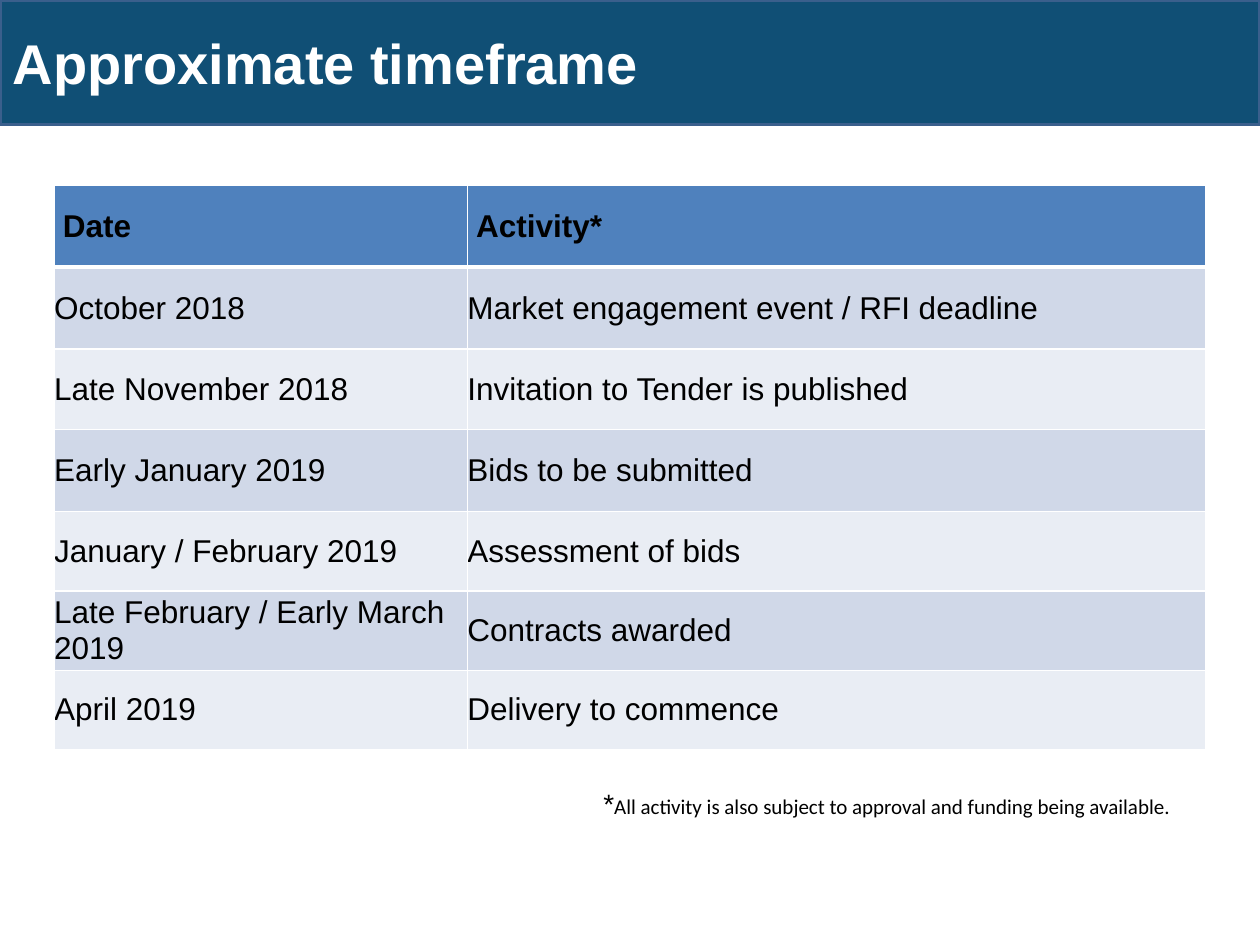
from lxml import etree
from pptx import Presentation
from pptx.dml.color import RGBColor
from pptx.enum.text import MSO_ANCHOR, MSO_AUTO_SIZE, PP_ALIGN
from pptx.oxml.ns import qn
from pptx.util import Inches, Pt

MIDDLE = MSO_ANCHOR.MIDDLE
LEFT = PP_ALIGN.LEFT
GROW = MSO_AUTO_SIZE.SHAPE_TO_FIT_TEXT
TITLE_ONLY = 5

COLORS = {
    "banner": "104F75",
    "banner_line": "3A5F8C",
    "header": "4F81BD",
    "odd_row": "D0D8E8",
    "even_row": "E9EDF4",
    "white": "FFFFFF",
    "black": "000000",
}
ROWS = [
    ("Date", "Activity*"),
    ("October 2018", "Market engagement event / RFI deadline"),
    ("Late November 2018", "Invitation to Tender is published"),
    ("Early January 2019", "Bids to be submitted"),
    ("January / February 2019", "Assessment of bids"),
    ("Late February / Early March 2019", "Contracts awarded"),
    ("April 2019", "Delivery to commence"),
]
COLUMN_WIDTHS = [3.28, 5.86]
ROW_HEIGHTS = [0.65, 0.65, 0.64, 0.65, 0.63, 0.63, 0.63]


def add_text(para, text, size=18, font="Arial", color="black", bold=False):
    para.alignment = LEFT
    span = para.add_run()
    span.text = text
    span.font.size = Pt(size)
    span.font.name = font
    span.font.bold = bold
    span.font.color.rgb = RGBColor.from_string(COLORS[color])


def add_border(cell, side, width):
    line = etree.SubElement(cell._tc.get_or_add_tcPr(), qn(f"a:ln{side}"), w=str(Pt(width)))
    fill = etree.SubElement(line, qn("a:solidFill"))
    etree.SubElement(fill, qn("a:srgbClr"), val=COLORS["white"])


deck = Presentation()
deck.slide_width = Inches(10)
deck.slide_height = Inches(7.5)
page = deck.slides.add_slide(deck.slide_layouts[TITLE_ONLY])

title = page.shapes.title
title.left, title.top = Inches(0), Inches(0)
title.width, title.height = Inches(10), Inches(0.99)
title.fill.solid()
title.fill.fore_color.rgb = RGBColor.from_string(COLORS["banner"])
title.line.color.rgb = RGBColor.from_string(COLORS["banner_line"])
title.line.width = Pt(2)
title.text_frame.vertical_anchor = MIDDLE
title.text_frame.auto_size = MSO_AUTO_SIZE.NONE
add_text(title.text_frame.paragraphs[0], "Approximate timeframe", size=32, color="white", bold=True)

table = page.shapes.add_table(
    len(ROWS), len(COLUMN_WIDTHS), Inches(0.43), Inches(1.47),
    Inches(sum(COLUMN_WIDTHS)), Inches(sum(ROW_HEIGHTS)),
).table
for column, width in zip(table.columns, COLUMN_WIDTHS):
    column.width = Inches(width)

for row_index, (texts, height) in enumerate(zip(ROWS, ROW_HEIGHTS)):
    table.rows[row_index].height = Inches(height)
    is_header = row_index == 0
    shade = "header" if is_header else "odd_row" if row_index % 2 else "even_row"
    for column_index, text in enumerate(texts):
        cell = table.cell(row_index, column_index)
        cell.margin_left = Inches(0.07 if is_header else 0)
        cell.margin_right = cell.margin_top = cell.margin_bottom = Inches(0)
        cell.vertical_anchor = MIDDLE
        for side in "LRTB":
            thick = (side == "B" and is_header) or (side == "T" and row_index == 1)
            add_border(cell, side, 3 if thick else 1)
        cell.fill.solid()
        cell.fill.fore_color.rgb = RGBColor.from_string(COLORS[shade])
        add_text(cell.text_frame.paragraphs[0], text, bold=is_header)

footnote = page.shapes.add_textbox(Inches(4.69), Inches(6.19), Inches(4.8), Inches(0.37))
footnote.fill.solid()
footnote.fill.fore_color.rgb = RGBColor.from_string(COLORS["white"])
footnote.text_frame.word_wrap = True
footnote.text_frame.auto_size = GROW
note = footnote.text_frame.paragraphs[0]
add_text(note, "*", size=16)
add_text(note, "All activity is also subject to approval and funding being available.", size=12, font="Calibri")

deck.save("out.pptx")
